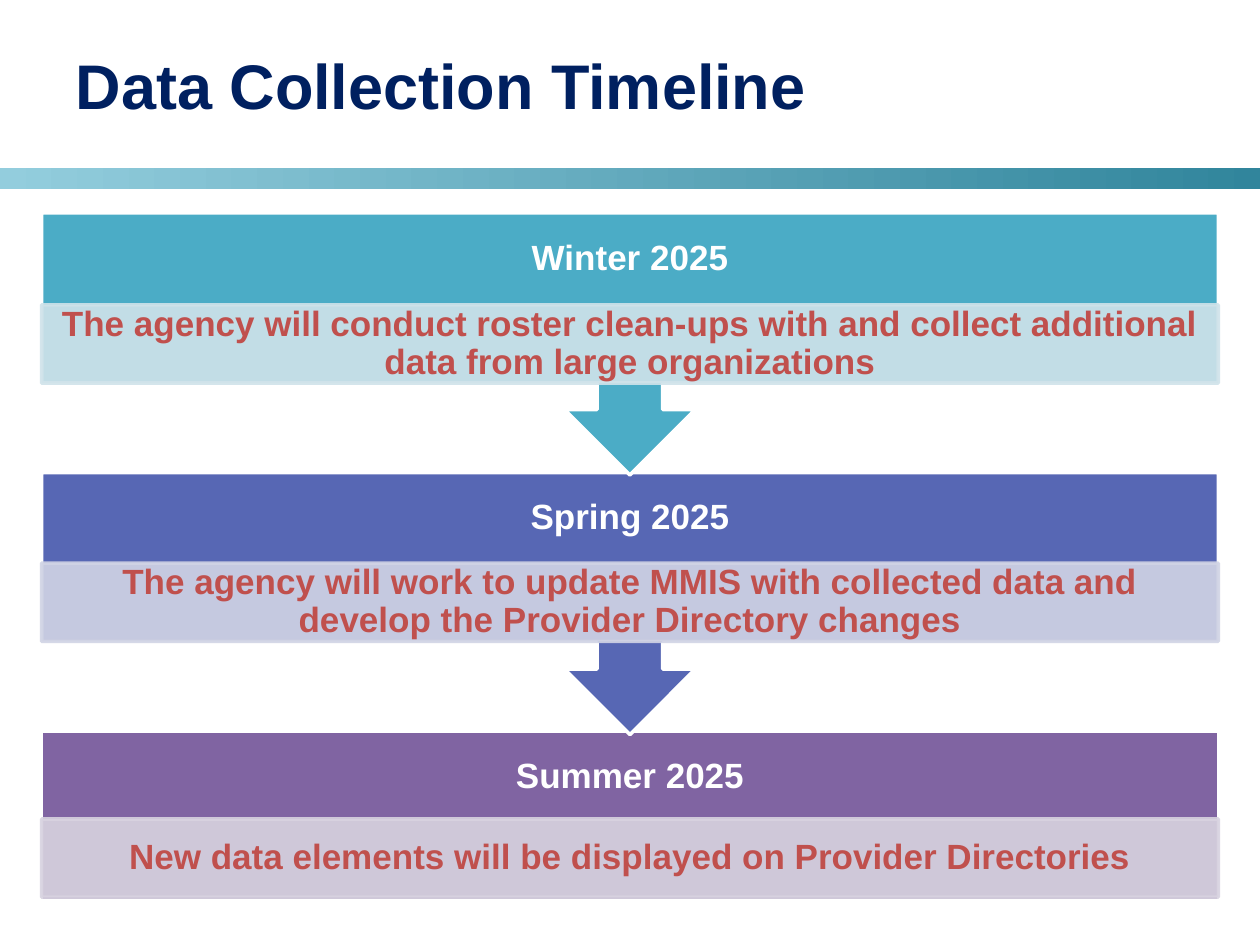
from lxml.etree import SubElement
from pptx import Presentation
from pptx.dml.color import RGBColor
from pptx.enum.shapes import MSO_SHAPE
from pptx.enum.text import MSO_ANCHOR, PP_ALIGN
from pptx.oxml.ns import qn
from pptx.util import Inches, Pt

LEFT, WIDTH = 0.33, 9.34
HEADER_HEIGHT, DETAIL_HEIGHT = 0.73, 0.62

# Shape, top, height, offset of detail bar, season, detail, colour, tint
STAGES = [
    (MSO_SHAPE.DOWN_ARROW_CALLOUT, 1.69, 2.08, 0.73, "Winter 2025",
     "The agency will conduct roster clean-ups with and collect "
     "additional data from large organizations", "4BACC6", "D0E3EA"),
    (MSO_SHAPE.DOWN_ARROW_CALLOUT, 3.75, 2.08, 0.72, "Spring 2025",
     "The agency will work to update MMIS with collected data and "
     "develop the Provider Directory changes", "5767B4", "D1D4E5"),
    (MSO_SHAPE.RECTANGLE, 5.8, 1.35, 0.7, "Summer 2025",
     "New data elements will be displayed on Provider Directories",
     "8064A2", "D8D3E0"),
]


def color(value):
    return RGBColor.from_string(value)


def set_opacity(shape, percent):
    """Make both the fill and the outline partly transparent."""
    for element in shape._element.spPr.iter(qn("a:srgbClr")):
        SubElement(element, qn("a:alpha")).set("val", str(percent * 1000))


def add_block(slide, kind, top, height, fill, line):
    shape = slide.shapes.add_shape(
        kind, Inches(LEFT), Inches(top), Inches(WIDTH), Inches(height))
    shape.shadow.inherit = False
    shape.fill.solid()
    shape.fill.fore_color.rgb = color(fill)
    shape.line.color.rgb = color(line)
    shape.line.width = Pt(2)
    return shape


def write_text(shape, text, size, font_color, align, margins=None):
    frame = shape.text_frame
    frame.word_wrap = True
    frame.vertical_anchor = MSO_ANCHOR.MIDDLE
    if margins:
        side, end = margins
        frame.margin_left = frame.margin_right = Inches(side)
        frame.margin_top = frame.margin_bottom = Inches(end)
    paragraph = frame.paragraphs[0]
    paragraph.alignment = align
    paragraph.line_spacing = 0.9
    run = paragraph.add_run()
    run.text = text
    run.font.name = "Arial"
    run.font.size = Pt(size)
    run.font.bold = True
    run.font.color.rgb = color(font_color)
    return paragraph


def add_title(slide, text):
    title = slide.shapes.title
    title.left, title.top = Inches(0.5), Inches(0.33)
    title.width, title.height = Inches(7.17), Inches(0.78)
    paragraph = write_text(title, text, 36, "002060", PP_ALIGN.LEFT)
    paragraph.line_spacing = Pt(36)


def add_gradient_band(slide):
    band = slide.shapes.add_shape(
        MSO_SHAPE.RECTANGLE, 0, Inches(1.33), Inches(10), Inches(0.17))
    band.shadow.inherit = False
    band.line.fill.background()
    band.fill.gradient()
    band.fill.gradient_angle = 0
    for stop, value in zip(band.fill.gradient_stops, ("93CDDD", "31859C")):
        stop.color.rgb = color(value)


def add_stage(slide, kind, top, height, offset, season, detail, fill, tint):
    add_block(slide, kind, top, height, fill, "FFFFFF")
    header = slide.shapes.add_textbox(
        Inches(LEFT), Inches(top), Inches(WIDTH), Inches(HEADER_HEIGHT))
    write_text(header, season, 20, "FFFFFF", PP_ALIGN.CENTER, (0.16, 0.16))
    bar = add_block(slide, MSO_SHAPE.RECTANGLE, top + offset,
                    DETAIL_HEIGHT, tint, tint)
    set_opacity(bar, 90)
    write_text(bar, detail, 20, "C0504D", PP_ALIGN.CENTER, (0.16, 0.03))


def main():
    presentation = Presentation()
    presentation.slide_width = Inches(10)
    presentation.slide_height = Inches(7.5)
    slide = presentation.slides.add_slide(presentation.slide_layouts[5])
    add_gradient_band(slide)
    add_title(slide, "Data Collection Timeline")
    # Last stage first, so each arrow tip lies over the next stage
    for stage in reversed(STAGES):
        add_stage(slide, *stage)
    presentation.save("out.pptx")


if __name__ == "__main__":
    main()
